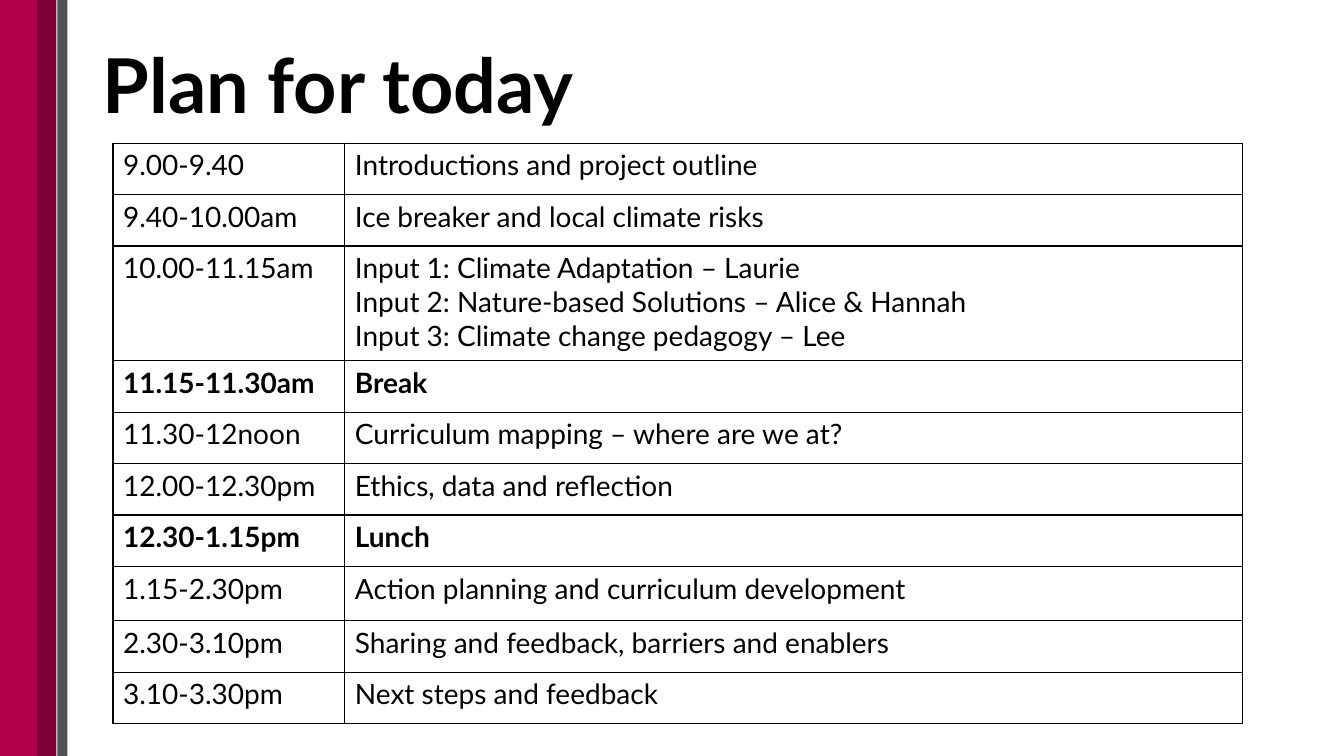
import pptx
import pptx.dml.color
import pptx.enum.shapes
import pptx.enum.text
import pptx.oxml
import pptx.oxml.ns
import pptx.util
from pptx.util import Inches

BLACK = "000000"
BANDS = [(0.36, 0.2, "7D0039"), (0, 0.37, "B4004A"), (0.57, 0.1, "515254")]
PLAN = [
    ("9.00-9.40", "Introductions and project outline"),
    ("9.40-10.00am", "Ice breaker and local climate risks"),
    ("10.00-11.15am", "Input 1: Climate Adaptation – Laurie\n"
                      "Input 2: Nature-based Solutions – Alice & Hannah\n"
                      "Input 3: Climate change pedagogy – Lee"),
    ("11.15-11.30am", "Break"),
    ("11.30-12noon", "Curriculum mapping – where are we at?"),
    ("12.00-12.30pm", "Ethics, data and reflection"),
    ("12.30-1.15pm", "Lunch"),
    ("1.15-2.30pm", "Action planning and curriculum development"),
    ("2.30-3.10pm", "Sharing and feedback, barriers and enablers"),
    ("3.10-3.30pm", "Next steps and feedback"),
]
PAUSES = {"Break", "Lunch"}
TALL = {2: 1.14, 7: 0.54}


def color(code):
    return pptx.dml.color.RGBColor.from_string(code)


def write(frame, text, size=20, bold=False, space=None):
    frame.text = text
    frame.word_wrap = True
    for para in frame.paragraphs:
        para.alignment = pptx.enum.text.PP_ALIGN.LEFT
        para.line_spacing = space
        for run in para.runs:
            run.font.name = "Lato"
            run.font.size = pptx.util.Pt(size)
            run.font.bold = bold
            run.font.color.rgb = color(BLACK)


def border(cell, width=1):
    props = cell._tc.get_or_add_tcPr()
    for side in "LRTB":
        props.append(pptx.oxml.parse_xml(
            f'<a:ln{side} {pptx.oxml.ns.nsdecls("a")} w="{pptx.util.Pt(width)}">'
            f'<a:solidFill><a:srgbClr val="{BLACK}"/></a:solidFill></a:ln{side}>'))


def stripes(slide, left, top, height):
    for shift, width, code in BANDS:
        band = slide.shapes.add_shape(
            pptx.enum.shapes.MSO_SHAPE.RECTANGLE,
            Inches(left + shift), Inches(top), Inches(width), Inches(height))
        band.shadow.inherit = False
        band.fill.solid()
        band.fill.fore_color.rgb = color(code)
        band.line.fill.background()


def heading(slide, left, top, width, height):
    title = slide.shapes.title
    title.left, title.top = Inches(left), Inches(top)
    title.width, title.height = Inches(width), Inches(height)
    frame = title.text_frame
    write(frame, "Plan for today", size=54, bold=True, space=0.9)
    frame.auto_size = pptx.enum.text.MSO_AUTO_SIZE.NONE
    frame.vertical_anchor = pptx.enum.text.MSO_ANCHOR.MIDDLE


def agenda(slide, left, top, width, height):
    table = slide.shapes.add_table(
        len(PLAN), 2, Inches(left), Inches(top),
        Inches(width), Inches(height)).table
    table.first_row = False
    table.horz_banding = False
    table.columns[0].width = Inches(2.3)
    table.columns[1].width = Inches(width - 2.3)
    for row, entry in enumerate(PLAN):
        table.rows[row].height = Inches(TALL.get(row, 0.51))
        for col, text in enumerate(entry):
            cell = table.cell(row, col)
            write(cell.text_frame, text, bold=entry[1] in PAUSES)
            border(cell)
            cell.fill.background()


def main():
    deck = pptx.Presentation()
    deck.slide_width = Inches(13.33)
    deck.slide_height = Inches(7.5)
    slide = deck.slides.add_slide(deck.slide_layouts[5])
    heading(slide, 0.92, 0.16, 11.5, 1.45)
    stripes(slide, 0, 0, 7.5)
    agenda(slide, 1.12, 1.42, 11.2, 5.77)
    deck.save("out.pptx")


if __name__ == "__main__":
    main()
